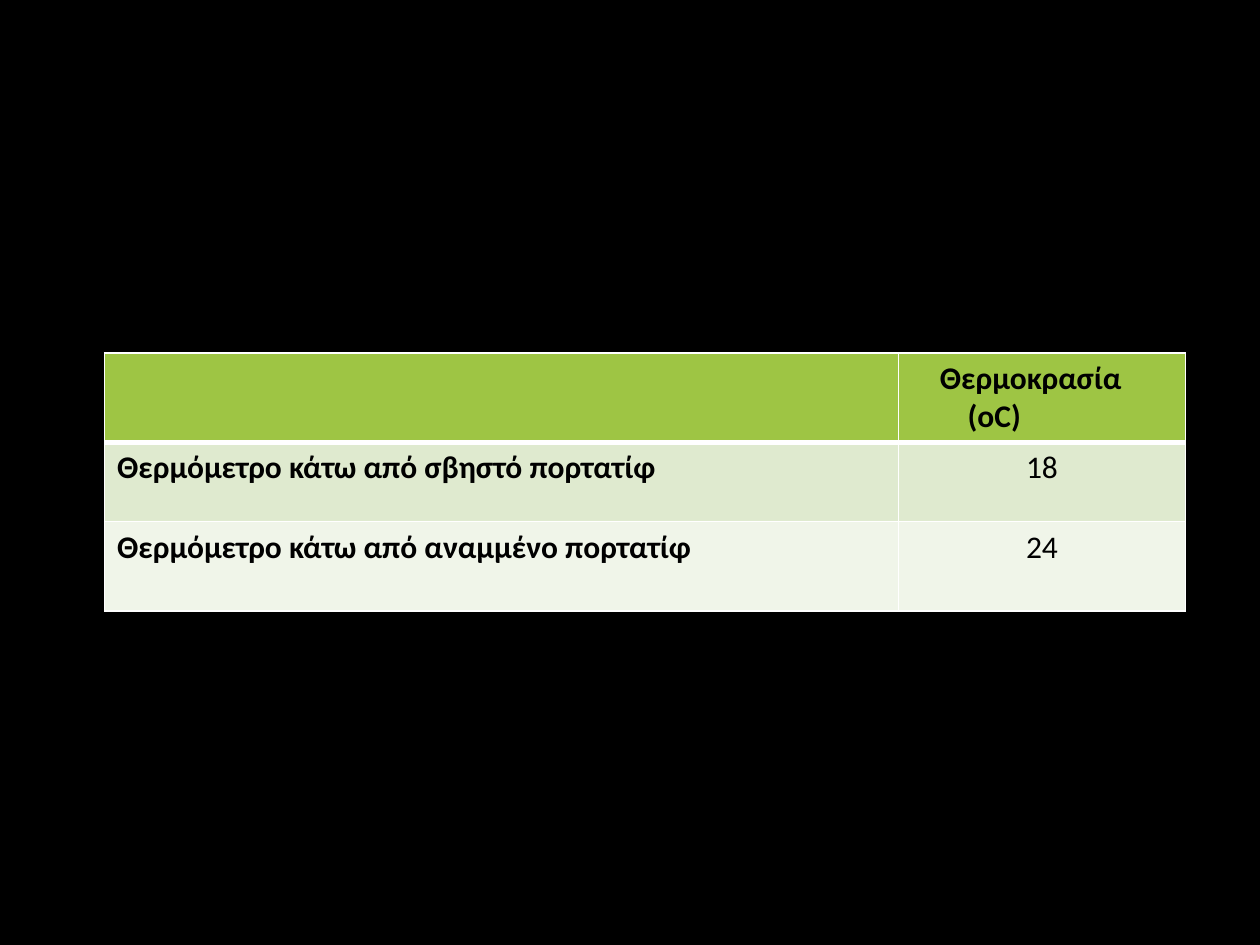
from lxml.etree import SubElement
from pptx import Presentation
from pptx.dml.color import RGBColor
from pptx.enum.text import PP_ALIGN
from pptx.oxml.ns import qn
from pptx.util import Inches, Pt

BLACK = RGBColor(0x00, 0x00, 0x00)
WHITE = RGBColor(0xFF, 0xFF, 0xFF)
ROW_FILLS = [
    RGBColor(0x9E, 0xC5, 0x44),
    RGBColor(0xDF, 0xEA, 0xCF),
    RGBColor(0xF0, 0xF5, 0xE9),
]

HEADER = ["Θερμοκρασία", "(οC)"]
HEADER_INDENTS = [0.23, 0.45]
READINGS = [
    ("Θερμόμετρο κάτω από σβηστό πορτατίφ", "18"),
    ("Θερμόμετρο κάτω από αναμμένο πορτατίφ", "24"),
]
LEFT, TOP = 0.83, 2.8
COL_WIDTHS = [6.3, 2.28]
ROW_HEIGHTS = [0.71, 0.63, 0.71]


def write(p, text, bold=True, align=PP_ALIGN.LEFT, indent=0):
    p.alignment = align
    if indent:
        p._p.get_or_add_pPr().set("marL", str(Inches(indent)))
    r = p.add_run()
    r.text = text
    r.font.name, r.font.size = "Calibri", Pt(18)
    r.font.bold = bold
    r.font.color.rgb = BLACK


def set_border(cell, side, width):
    ln = SubElement(cell._tc.get_or_add_tcPr(), qn(f"a:ln{side}"), w=str(Pt(width)))
    fill = SubElement(ln, qn("a:solidFill"))
    SubElement(fill, qn("a:srgbClr"), val=str(WHITE))


def style_cells(table):
    for i, color in enumerate(ROW_FILLS):
        for cell in table.rows[i].cells:
            for side in "LRTB":
                under_header = (i, side) in ((0, "B"), (1, "T"))
                set_border(cell, side, 3 if under_header else 1)
            cell.fill.solid()
            cell.fill.fore_color.rgb = color


def main():
    prs = Presentation()
    prs.slide_width, prs.slide_height = Inches(10), Inches(7.5)
    s = prs.slides.add_slide(prs.slide_layouts[6])
    s.background.fill.solid()
    s.background.fill.fore_color.rgb = BLACK

    table = s.shapes.add_table(
        len(ROW_HEIGHTS), len(COL_WIDTHS), Inches(LEFT), Inches(TOP),
        Inches(sum(COL_WIDTHS)), Inches(sum(ROW_HEIGHTS)),
    ).table
    for col, width in zip(table.columns, COL_WIDTHS):
        col.width = Inches(width)
    for row, height in zip(table.rows, ROW_HEIGHTS):
        row.height = Inches(height)
    style_cells(table)

    tf = table.cell(0, 1).text_frame
    tf.add_paragraph()
    for p, text, indent in zip(tf.paragraphs, HEADER, HEADER_INDENTS):
        write(p, text, indent=indent)
    for i, (label, value) in enumerate(READINGS, start=1):
        write(table.cell(i, 0).text_frame.paragraphs[0], label)
        write(table.cell(i, 1).text_frame.paragraphs[0], value,
              bold=False, align=PP_ALIGN.CENTER)

    prs.save("out.pptx")


if __name__ == "__main__":
    main()
